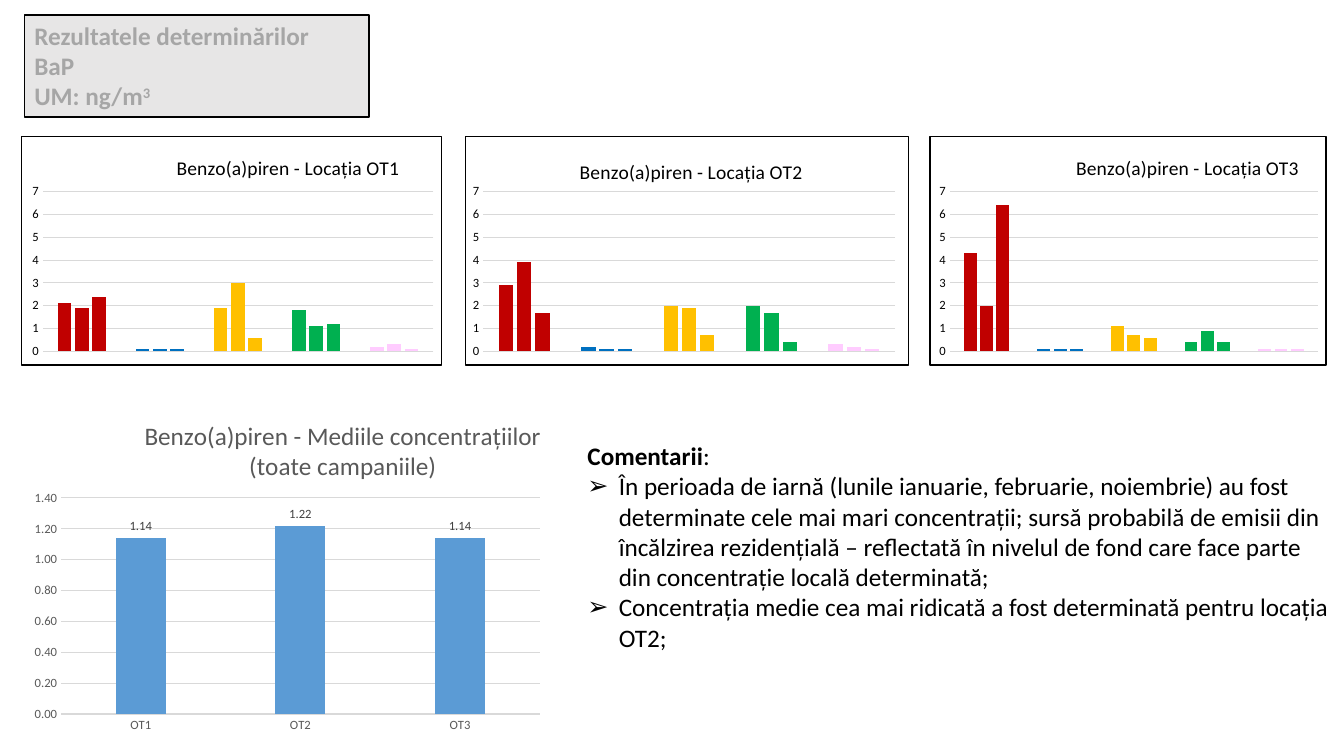
from dataclasses import dataclass
from typing import Any, Optional

from lxml.etree import SubElement
from pptx import Presentation
from pptx.chart.chart import Chart
from pptx.chart.data import CategoryChartData
from pptx.dml.color import RGBColor
from pptx.enum.chart import XL_CHART_TYPE, XL_LABEL_POSITION, XL_TICK_MARK
from pptx.enum.text import MSO_ANCHOR, MSO_AUTO_SIZE, PP_ALIGN
from pptx.oxml import parse_xml
from pptx.oxml.ns import nsdecls, qn
from pptx.slide import Slide
from pptx.util import Cm, Pt


@dataclass(frozen=True)
class Theme:
    font: str = "Calibri"
    black: str = "000000"
    white: str = "FFFFFF"
    panel: str = "E7E6E6"
    muted: str = "A6A6A6"
    grid: str = "D9D9D9"
    axis: str = "595959"
    label: str = "404040"
    mean_bar: str = "5B9BD5"
    campaigns: tuple[str, ...] = ("C00000", "0070C0", "FFC000", "00B050", "FFCCFF")
    text: float = 18
    location_title: float = 14
    tick: float = 9
    chart: float = 10


@dataclass(frozen=True)
class Box:
    left: float
    top: float
    width: float
    height: float

    def lengths(self) -> tuple[Cm, Cm, Cm, Cm]:
        return Cm(self.left), Cm(self.top), Cm(self.width), Cm(self.height)


@dataclass(frozen=True)
class ColumnChart:
    title: str
    box: Box
    title_at: tuple[float, float]
    plot: Box
    categories: tuple[str, ...]
    series: tuple[tuple[float, ...], ...]
    title_size: float
    text_color: str
    number_format: str
    maximum: Optional[float] = None


THEME = Theme()
CAMPAIGNS = ("1", "2", "3", "4", "5")


def location_chart(name: str, left: float, width: float, title_at: tuple[float, float],
                   plot_left: float, series: tuple[tuple[float, ...], ...]) -> ColumnChart:
    return ColumnChart(f"Benzo(a)piren - Locația {name}", Box(left, 3.43, width, 5.79),
                       title_at, Box(plot_left, 0.24, 0.93, 0.7), CAMPAIGNS, series,
                       THEME.location_title, THEME.black, "0", 7)


LOCATIONS = (
    location_chart("OT1", 0.53, 10.62, (0.36, 0.06), 0.05,
                   ((2.1, 0.1, 1.9, 1.8, 0.2), (1.9, 0.1, 3, 1.1, 0.3), (2.4, 0.1, 0.6, 1.2, 0.1))),
    location_chart("OT2", 11.71, 11.2, (0.25, 0.08), 0.04,
                   ((2.9, 0.2, 2, 2, 0.3), (3.9, 0.1, 1.9, 1.7, 0.2), (1.7, 0.1, 0.7, 0.4, 0.1))),
    location_chart("OT3", 23.42, 10.01, (0.36, 0.06), 0.05,
                   ((4.3, 0.1, 1.1, 0.4, 0.1), (2, 0.1, 0.7, 0.9, 0.1), (6.4, 0.1, 0.6, 0.4, 0.1))),
)
MEANS = ColumnChart("Benzo(a)piren - Mediile concentrațiilor (toate campaniile)",
                    Box(0.61, 10.08, 13.26, 8.51), (0.22, 0.04), Box(0.07, 0.29, 0.91, 0.64),
                    ("OT1", "OT2", "OT3"), ((1.14, 1.22, 1.14),), THEME.text, THEME.axis, "0.00")
HEADING = ("Rezultatele determinărilor", "BaP", "UM: ng/m")
COMMENTS = (
    "În perioada de iarnă (lunile ianuarie, februarie, noiembrie) au fost determinate cele mai "
    "mari concentrații; sursă probabilă de emisii din încălzirea rezidențială – reflectată în "
    "nivelul de fond care face parte din concentrație locală determinată;",
    "Concentrația medie cea mai ridicată a fost determinată pentru locația OT2;",
)


def apply(target: Any, values: dict[str, Any]) -> None:
    for attribute, value in values.items():
        setattr(target, attribute, value)


def style_font(font: Any, size: float, color: str, bold: bool = False) -> None:
    apply(font, {"name": THEME.font, "size": Pt(size), "bold": bold})
    font.color.rgb = RGBColor.from_string(color)


def add_run(paragraph: Any, text: str, color: str, bold: bool = False) -> Any:
    run = paragraph.add_run()
    run.text = text
    style_font(run.font, THEME.text, color, bold)
    return run


def place(placeholder: Any, box: Box) -> Any:
    apply(placeholder, dict(zip(("left", "top", "width", "height"), box.lengths())))
    apply(placeholder.text_frame, {"word_wrap": True, "auto_size": MSO_AUTO_SIZE.NONE,
                                   "vertical_anchor": MSO_ANCHOR.TOP})
    return placeholder.text_frame


def next_paragraph(frame: Any, first: bool) -> Any:
    paragraph = frame.paragraphs[0] if first else frame.add_paragraph()
    apply(paragraph, {"alignment": PP_ALIGN.LEFT, "space_before": Pt(0)})
    return paragraph


def write_heading(slide: Slide) -> None:
    heading = slide.shapes.title
    frame = place(heading, Box(0.61, 0.38, 8.69, 2.57))
    heading.fill.solid()
    heading.fill.fore_color.rgb = RGBColor.from_string(THEME.panel)
    heading.line.color.rgb = RGBColor.from_string(THEME.black)
    heading.line.width = Pt(1)
    for index, line in enumerate(HEADING):
        paragraph = next_paragraph(frame, index == 0)
        add_run(paragraph, line, THEME.muted, True)
    exponent = add_run(paragraph, "3", THEME.muted, True)
    exponent.font._element.set("baseline", "30000")


def set_bullet(paragraph: Any, indent: float, symbol: str = "") -> None:
    properties = paragraph._p.get_or_add_pPr()
    properties.set("marL", str(Cm(indent)))
    properties.set("indent", str(-Cm(indent)))
    if symbol:
        SubElement(properties, qn("a:buChar")).set("char", symbol)
    else:
        SubElement(properties, qn("a:buNone"))


def write_comments(slide: Slide) -> None:
    frame = place(slide.placeholders[1], Box(14.55, 10.97, 19.3, 5.64))
    lead = next_paragraph(frame, True)
    set_bullet(lead, 0)
    add_run(lead, "Comentarii", THEME.black, True)
    add_run(lead, ":", THEME.black)
    for comment in COMMENTS:
        paragraph = next_paragraph(frame, False)
        set_bullet(paragraph, 0.79, "➢")
        add_run(paragraph, comment, THEME.black)


def set_layout(parent: Any, index: int, values: dict[str, Any]) -> None:
    for existing in parent.findall(qn("c:layout")):
        parent.remove(existing)
    entries = "".join(f'<c:{tag} val="{value}"/>' for tag, value in values.items())
    parent.insert(index, parse_xml(
        f'<c:layout {nsdecls("c")}><c:manualLayout>{entries}</c:manualLayout></c:layout>'))


def set_frame(chart: Chart) -> None:
    chart.element.find(qn("c:chart")).addnext(parse_xml(
        f'<c:spPr {nsdecls("c", "a")}><a:solidFill><a:srgbClr val="{THEME.white}"/></a:solidFill>'
        f'<a:ln w="{Pt(1)}"><a:solidFill><a:srgbClr val="{THEME.black}"/></a:solidFill></a:ln>'
        f'</c:spPr>'))


def style_line(line: Any) -> None:
    line.color.rgb = RGBColor.from_string(THEME.grid)
    line.width = Pt(0.75)


def add_columns(slide: Slide, item: ColumnChart) -> Chart:
    data = CategoryChartData()
    data.categories = item.categories
    for number, values in enumerate(item.series, 1):
        data.add_series(f"Series {number}", values)
    chart = slide.shapes.add_chart(XL_CHART_TYPE.COLUMN_CLUSTERED, *item.box.lengths(), data).chart
    apply(chart, {"has_legend": False, "has_title": True})
    style_font(chart.font, THEME.chart, THEME.black)
    title = chart.chart_title
    title.text_frame.text = item.title
    style_font(title.text_frame.paragraphs[0].runs[0].font, item.title_size, item.text_color)
    set_layout(title._element, 1, {"xMode": "edge", "yMode": "edge",
                                   "x": item.title_at[0], "y": item.title_at[1]})
    set_layout(chart.element.find(".//" + qn("c:plotArea")), 0, {
        "layoutTarget": "inner", "xMode": "edge", "yMode": "edge", "x": item.plot.left,
        "y": item.plot.top, "w": item.plot.width, "h": item.plot.height})
    apply(chart.plots[0], {"gap_width": 219, "overlap": -27, "vary_by_categories": False})
    for axis in (chart.category_axis, chart.value_axis):
        apply(axis, {"major_tick_mark": XL_TICK_MARK.NONE, "minor_tick_mark": XL_TICK_MARK.NONE})
        style_font(axis.tick_labels.font, THEME.tick, item.text_color)
    apply(chart.value_axis, {"minimum_scale": 0, "maximum_scale": item.maximum,
                             "has_major_gridlines": True})
    apply(chart.value_axis.tick_labels, {"number_format": item.number_format,
                                         "number_format_is_linked": False})
    chart.value_axis.format.line.fill.background()
    style_line(chart.value_axis.major_gridlines.format.line)
    return chart


def color_fill(fill: Any, color: str) -> None:
    fill.solid()
    fill.fore_color.rgb = RGBColor.from_string(color)


def draw_location(slide: Slide, item: ColumnChart) -> None:
    chart = add_columns(slide, item)
    chart.category_axis.visible = False
    set_frame(chart)
    for series in chart.series:
        for index, color in enumerate(THEME.campaigns):
            color_fill(series.points[index].format.fill, color)


def draw_means(slide: Slide) -> None:
    chart = add_columns(slide, MEANS)
    style_line(chart.category_axis.format.line)
    means = chart.series[0]
    color_fill(means.format.fill, THEME.mean_bar)
    apply(means.data_labels, {"show_value": True, "number_format": "0.00",
                              "number_format_is_linked": False,
                              "position": XL_LABEL_POSITION.OUTSIDE_END})
    style_font(means.data_labels.font, THEME.tick, THEME.label)


def main() -> None:
    presentation = Presentation()
    apply(presentation, {"slide_width": Cm(33.87), "slide_height": Cm(19.05)})
    slide = presentation.slides.add_slide(presentation.slide_layouts[1])
    write_heading(slide)
    write_comments(slide)
    for location in LOCATIONS:
        draw_location(slide, location)
    draw_means(slide)
    presentation.save("out.pptx")


if __name__ == "__main__":
    main()
